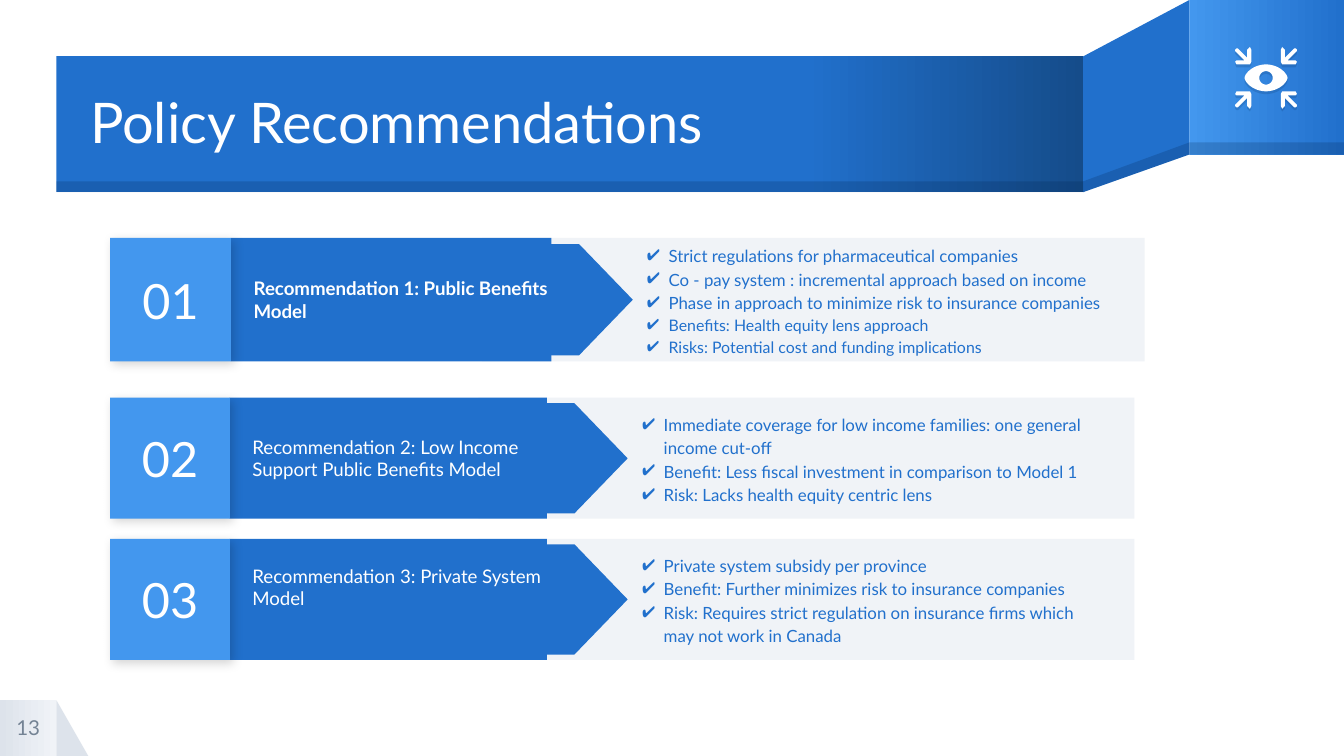
import math

import pptx
import pptx.dml.color
import pptx.enum.shapes
import pptx.enum.text
import pptx.oxml
import pptx.oxml.ns
import pptx.util

Inches = pptx.util.Inches
Pt = pptx.util.Pt
RGBColor = pptx.dml.color.RGBColor
Shape = pptx.enum.shapes.MSO_SHAPE
Align = pptx.enum.text.PP_ALIGN

BLUE = RGBColor(0x21, 0x70, 0xCC)
LIGHT_BLUE = RGBColor(0x43, 0x97, 0xEE)
DARK_BLUE = RGBColor(0x15, 0x4C, 0x8A)
NAVY = RGBColor(0x00, 0x1F, 0x46)
PALE = RGBColor(0xF0, 0xF3, 0xF7)
PALE_GREY = RGBColor(0xDD, 0xE3, 0xEB)
GREY = RGBColor(0x74, 0x83, 0x94)
WHITE = RGBColor(0xFF, 0xFF, 0xFF)
BLACK = RGBColor(0x00, 0x00, 0x00)

FONT = "Lato"
TITLE = "Policy Recommendations"
PAGE_NUMBER = "13"

# top, height and scale (across) place a card; label_shift moves its label down.
CARDS = [
    {"number": "01", "top": 1.77, "height": 0.92, "scale": 1.01, "bold": True,
     "label_shift": 0,
     "label": "Recommendation 1: Public Benefits Model",
     "points": [("Strict regulations for pharmaceutical companies", 9),
                ("Co - pay system : incremental approach based on income", 9),
                ("Phase in approach to minimize risk to insurance companies", 9),
                ("Benefits: Health equity lens approach", 8.5),
                ("Risks: Potential cost and funding implications", 8.5)]},
    {"number": "02", "top": 2.96, "height": 0.9, "scale": 1, "bold": False,
     "label_shift": 0,
     "label": "Recommendation 2: Low Income Support Public Benefits Model",
     "points": [("Immediate coverage for low income families: "
                 "one general income cut-off", 9),
                ("Benefit: Less fiscal investment in comparison to Model 1", 9),
                ("Risk: Lacks health equity centric lens", 9)]},
    {"number": "03", "top": 4.01, "height": 0.9, "scale": 1, "bold": False,
     "label_shift": -0.09,
     "label": "Recommendation 3: Private System Model",
     "points": [("Private system subsidy per province", 9),
                ("Benefit: Further minimizes risk to insurance companies", 9),
                ("Risk: Requires strict regulation on insurance firms "
                 "which may not work in Canada", 9)]},
]
CARD_LEFT = 0.82

ICON_CENTER = (9.42, 0.58)
ARROW = [(0.22, 0.10), (0.12, 0.10), (0.11, 0.12), (0.11, 0.21), (0.12, 0.23),
         (0.14, 0.21), (0.14, 0.15), (0.21, 0.22), (0.22, 0.22), (0.23, 0.21),
         (0.23, 0.20), (0.16, 0.13), (0.22, 0.13), (0.23, 0.12)]

presentation = pptx.Presentation()
presentation.slide_width = Inches(10)
presentation.slide_height = Inches(10 * 9 / 16)
slide = presentation.slides.add_slide(presentation.slide_layouts[6])


def element(xml):
    return pptx.oxml.parse_xml(xml.replace(">", f" {pptx.oxml.ns.nsdecls('a')}>", 1))


def paint(shape, color, alpha=None):
    shape.shadow.inherit = False
    shape.line.fill.background()
    shape.fill.solid()
    shape.fill.fore_color.rgb = color
    if alpha is not None:
        color_node = shape._element.spPr.find(".//" + pptx.oxml.ns.qn("a:srgbClr"))
        color_node.append(element(f'<a:alpha val="{alpha * 1000}"></a:alpha>'))
    return shape


def add_block(left, top, width, height, color, alpha=None, kind=Shape.RECTANGLE):
    shape = slide.shapes.add_shape(
        kind, Inches(left), Inches(top), Inches(width), Inches(height))
    return paint(shape, color, alpha)


def add_outline(contours, color, alpha=None):
    """Draw closed contours, given in inches, as one freeform."""
    contours = [[(Inches(x), Inches(y)) for x, y in contour] for contour in contours]
    builder = slide.shapes.build_freeform(*contours[0][0], scale=1.0)
    builder.add_line_segments(contours[0][1:], close=True)
    for contour in contours[1:]:
        builder.move_to(*contour[0])
        builder.add_line_segments(contour[1:], close=True)
    return paint(builder.convert_to_shape(), color, alpha)


def set_gradient(shape, stops):
    """Fill from left to right with (percent, color) stops."""
    marks = "".join(f'<a:gs pos="{percent * 1000}"><a:srgbClr val="{color}"/></a:gs>'
                    for percent, color in stops)
    gradient = element(f'<a:gradFill><a:gsLst>{marks}</a:gsLst>'
                       '<a:lin ang="0" scaled="0"/></a:gradFill>')
    properties = shape._element.spPr
    properties.replace(properties.find(pptx.oxml.ns.qn("a:solidFill")), gradient)


def set_shadow(shape, color, alpha, blur, distance, angle):
    effects = shape._element.spPr.find(pptx.oxml.ns.qn("a:effectLst"))
    effects.append(element(
        f'<a:outerShdw blurRad="{Pt(blur)}" dist="{Pt(distance)}" '
        f'dir="{angle * 60000}" algn="ctr" rotWithShape="0">'
        f'<a:srgbClr val="{color}"><a:alpha val="{alpha * 1000}"/></a:srgbClr>'
        '</a:outerShdw>'))


def prepare_frame(shape, inset):
    frame = shape.text_frame
    frame.word_wrap = True
    frame.vertical_anchor = pptx.enum.text.MSO_ANCHOR.MIDDLE
    frame.margin_left = frame.margin_right = Inches(inset)
    frame.margin_top = frame.margin_bottom = Inches(inset)
    return frame


def add_text(left, top, width, height, inset=0.1):
    box = slide.shapes.add_textbox(
        Inches(left), Inches(top), Inches(width), Inches(height))
    return prepare_frame(box, inset)


def write(paragraph, text, size, color, bold=False, align=Align.LEFT):
    paragraph.alignment = align
    run = paragraph.add_run()
    run.text = text
    run.font.name = FONT
    run.font.size = Pt(size)
    run.font.bold = bold
    run.font.color.rgb = color


def add_check_bullet(paragraph):
    properties = paragraph._p.get_or_add_pPr()
    properties.set("marL", str(Inches(0.35)))
    properties.set("indent", str(Inches(-0.16)))
    properties.append(element(f'<a:buClr><a:srgbClr val="{BLUE}"/></a:buClr>'))
    properties.append(element('<a:buSzPct val="115000"></a:buSzPct>'))
    properties.append(element('<a:buChar char="✔"></a:buChar>'))


def add_banner():
    add_block(0.42, 5.21, 0.24, 0.42, PALE_GREY, kind=Shape.RIGHT_TRIANGLE)
    set_gradient(add_block(0, 5.21, 0.42, 0.42, PALE_GREY),
                 [(0, PALE_GREY), (100, PALE)])
    add_outline([[(8.85, 0), (8.06, 0.42), (8.06, 1.43), (8.85, 1.15)]], BLUE)
    set_gradient(add_block(8.85, 0, 1.15, 1.15, BLUE), [(0, LIGHT_BLUE), (100, BLUE)])
    set_gradient(add_block(0.42, 0.42, 7.64, 1.01, BLUE),
                 [(0, BLUE), (73, BLUE), (100, DARK_BLUE)])
    add_outline([[(8.85, 1.06), (8.06, 1.35), (8.06, 1.43), (8.85, 1.15)]], NAVY, 20)
    add_block(8.85, 1.06, 1.15, 0.09, NAVY, 20)
    add_block(0.42, 1.35, 7.64, 0.08, NAVY, 20)


def add_icon():
    """Draw an eye with four arrows pointing at it."""
    center_x, center_y = ICON_CENTER
    turns = [math.radians(step) for step in range(0, 360, 6)]
    eye = [(center_x + 0.16 * math.cos(turn),
            center_y + 0.1 * math.sin(turn) * abs(math.sin(turn)) ** 0.3)
           for turn in turns]
    pupil = [(center_x + 0.05 * math.cos(turn), center_y + 0.05 * math.sin(turn))
             for turn in turns]
    parts = [[eye, pupil]]
    for side_x in (1, -1):
        for side_y in (1, -1):
            parts.append([[(center_x + side_x * x, center_y + side_y * y)
                           for x, y in ARROW]])
    for contours in parts:
        set_shadow(add_outline(contours, WHITE), NAVY, 15, 0, 1.5, 90)


def add_card(card):
    scale, top, height = card["scale"], card["top"], card["height"]
    middle = top + height / 2

    def x(offset):
        return CARD_LEFT + offset * scale

    add_block(x(2.74), top, 4.88 * scale, height, PALE)
    add_block(x(0.89), top, 2.36 * scale, height, BLUE)
    thickness, length = 0.82 * scale, 1.98 * scale
    pointer = add_block(x(2.86) - thickness / 2, middle - length / 2, thickness, length,
                        BLUE, kind=Shape.FLOWCHART_OFFPAGE_CONNECTOR)
    pointer.rotation = 270

    label = add_text(x(0.96), middle - 0.35 + card["label_shift"], 2.49 * scale, 0.7)
    label.paragraphs[0].space_before = Pt(4.8)
    write(label.paragraphs[0], card["label"], 10, WHITE, card["bold"])

    square = add_block(x(0), top, 0.89 * scale, height, LIGHT_BLUE)
    set_shadow(square, BLACK, 17, 5.6, 2.2, 45)
    write(prepare_frame(square, 0.1).paragraphs[0], card["number"], 26, WHITE,
          align=Align.CENTER)

    points = add_text(x(3.67), middle - 0.52, 3.81 * scale, 1.04)
    for index, (text, size) in enumerate(card["points"]):
        paragraph = points.add_paragraph() if index else points.paragraphs[0]
        paragraph.line_spacing = 1.15
        write(paragraph, text, size, BLUE)
        add_check_bullet(paragraph)


add_banner()
add_icon()
title = add_text(0.67, 0.43, 7.39, 1.01, inset=0).paragraphs[0]
title.line_spacing = 0.9
write(title, TITLE, 30, WHITE)
write(add_text(0, 5.2, 0.42, 0.42, inset=0).paragraphs[0], PAGE_NUMBER, 11, GREY,
      align=Align.CENTER)
for card in CARDS:
    add_card(card)
presentation.save("out.pptx")
